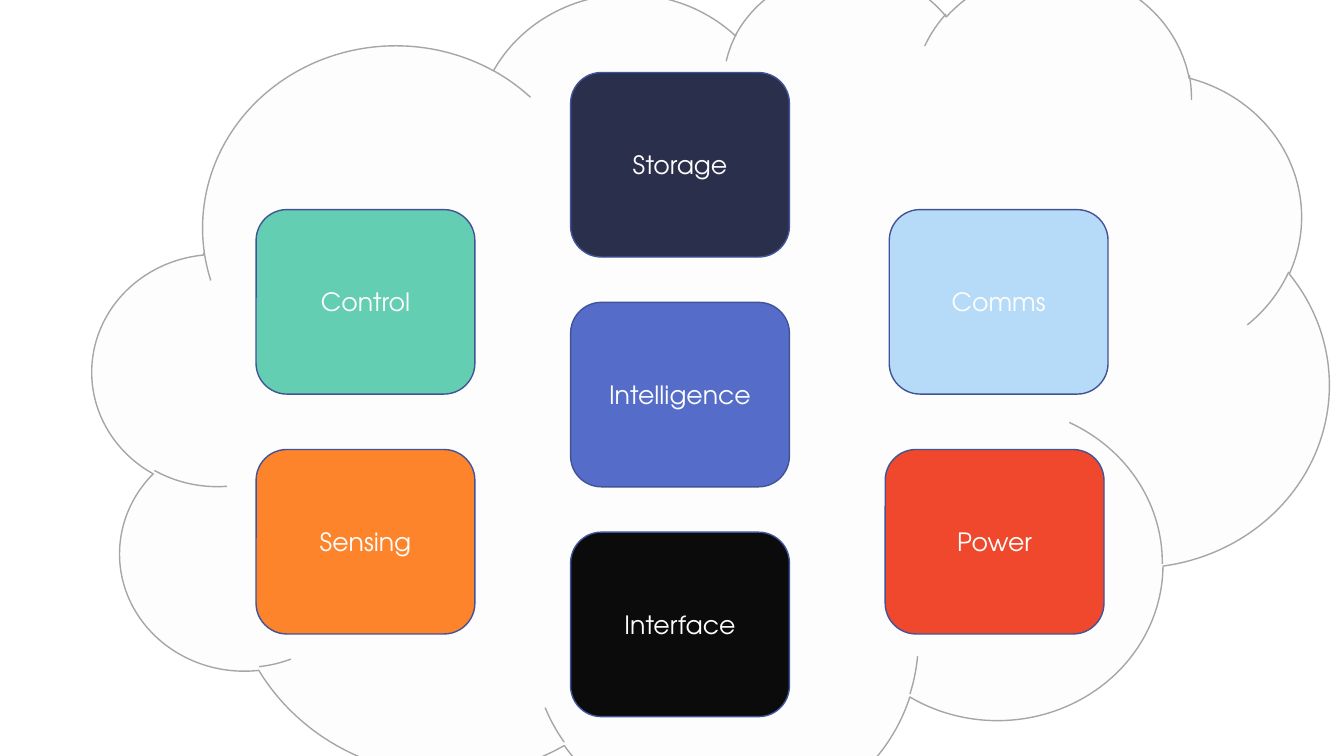
from dataclasses import dataclass

from lxml.etree import SubElement
from pptx import Presentation
from pptx.dml.color import RGBColor
from pptx.enum.shapes import MSO_SHAPE
from pptx.enum.text import MSO_ANCHOR, PP_ALIGN
from pptx.oxml.ns import qn
from pptx.shapes.autoshape import Shape
from pptx.slide import Slide
from pptx.util import Inches, Pt

SLIDE_WIDTH, SLIDE_HEIGHT = 13.33, 7.5
FONT_NAME = "TeX Gyre Adventor"

WHITE = RGBColor(0xFF, 0xFF, 0xFF)
OUTLINE = RGBColor(0x3A, 0x4C, 0x94)
CLOUD_FILL = RGBColor(0xD9, 0xD9, 0xD9)
CLOUD_LINE = RGBColor(0xA6, 0xA6, 0xA6)
INDIGO = RGBColor(0x4E, 0x67, 0xC8)
ORANGE = RGBColor(0xFF, 0x80, 0x21)
GREEN = RGBColor(0x5D, 0xCE, 0xAF)
RED = RGBColor(0xF1, 0x41, 0x24)
SKY = RGBColor(0xB4, 0xDC, 0xFA)
NAVY = RGBColor(0x21, 0x27, 0x45)
BLACK = RGBColor(0x00, 0x00, 0x00)

TILE_WIDTH, TILE_HEIGHT = 2.17, 1.83
FIRST_COLUMN, COLUMN_STEP = 2.54, 3.12


@dataclass(frozen=True)
class Tile:
    label: str
    fill: RGBColor
    shift: float = 0


@dataclass(frozen=True)
class Stack:
    first_row: float
    row_step: float
    tiles: tuple[Tile, ...]


STACKS = (
    Stack(2.08, 2.38, (Tile("Control", GREEN), Tile("Sensing", ORANGE))),
    Stack(0.72, 2.28, (Tile("Storage", NAVY), Tile("Intelligence", INDIGO),
                       Tile("Interface", BLACK))),
    Stack(2.08, 2.38, (Tile("Comms", SKY, 0.04), Tile("Power", RED))),
)


def add_outlined_shape(slide: Slide, kind: MSO_SHAPE, left: float, top: float,
                       width: float, height: float, fill: RGBColor,
                       line: RGBColor) -> Shape:
    shape = slide.shapes.add_shape(
        kind, Inches(left), Inches(top), Inches(width), Inches(height))
    shape.shadow.inherit = False
    shape.fill.solid()
    shape.fill.fore_color.rgb = fill
    shape.line.color.rgb = line
    shape.line.width = Pt(1)
    return shape


def add_tile(slide: Slide, tile: Tile, left: float, top: float) -> None:
    shape = add_outlined_shape(slide, MSO_SHAPE.ROUNDED_RECTANGLE, left, top,
                               TILE_WIDTH, TILE_HEIGHT, tile.fill, OUTLINE)
    text_frame = shape.text_frame
    text_frame.text = tile.label
    text_frame.vertical_anchor = MSO_ANCHOR.MIDDLE
    paragraph = text_frame.paragraphs[0]
    paragraph.alignment = PP_ALIGN.CENTER
    font = paragraph.runs[0].font
    font.name = FONT_NAME
    font.size = Pt(18)
    font.color.rgb = WHITE


def add_cloud(slide: Slide) -> None:
    cloud = add_outlined_shape(slide, MSO_SHAPE.CLOUD, 0.92, -0.32, 12.26, 8.49,
                               CLOUD_FILL, CLOUD_LINE)
    fill_color = cloud.element.spPr.find(qn("a:solidFill")).find(qn("a:srgbClr"))
    SubElement(fill_color, qn("a:alpha"), val="5000")


def main() -> None:
    presentation = Presentation()
    presentation.slide_width = Inches(SLIDE_WIDTH)
    presentation.slide_height = Inches(SLIDE_HEIGHT)
    slide = presentation.slides.add_slide(presentation.slide_layouts[6])
    for column, stack in enumerate(STACKS):
        for row, tile in enumerate(stack.tiles):
            add_tile(slide, tile,
                     FIRST_COLUMN + column * COLUMN_STEP + tile.shift,
                     stack.first_row + row * stack.row_step)
    add_cloud(slide)
    presentation.save("out.pptx")


if __name__ == "__main__":
    main()
